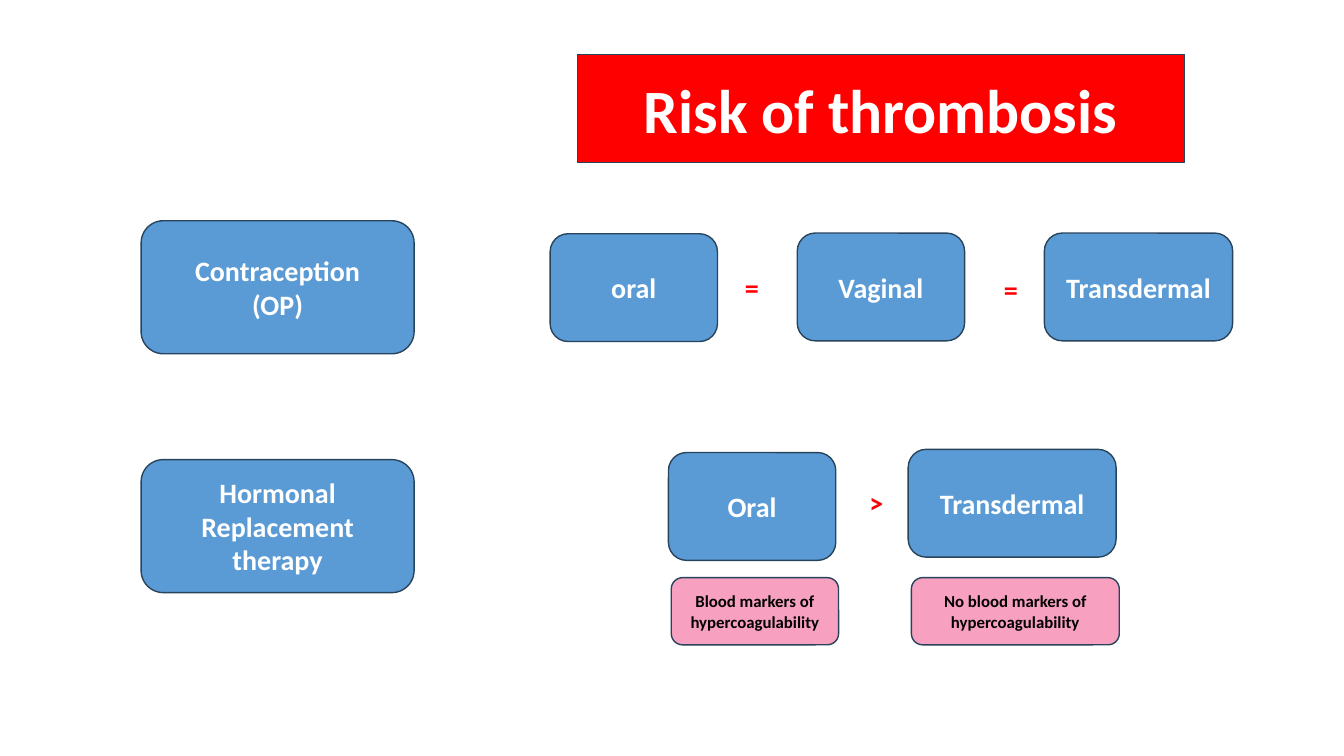
"""Build a slide comparing thrombosis risk by route of hormone intake."""
from dataclasses import dataclass

from lxml.etree import SubElement
from pptx import Presentation
from pptx.dml.color import RGBColor as RGB
from pptx.enum.shapes import MSO_SHAPE as Kind
from pptx.enum.text import MSO_ANCHOR as Anchor, MSO_AUTO_SIZE as Fit, PP_ALIGN as Align
from pptx.oxml.ns import qn
from pptx.util import Pt


@dataclass(frozen=True)
class Theme:
    font: str = "Calibri"
    blue: RGB = RGB(0x5B, 0x9B, 0xD5)
    red: RGB = RGB(0xFF, 0, 0)
    pink: RGB = RGB(0xF8, 0xA0, 0xBF)
    edge: RGB = RGB(0x28, 0x44, 0x5D)
    white: RGB = RGB(0xFF, 0xFF, 0xFF)
    black: RGB = RGB(0, 0, 0)
    head: int = 44
    body: int = 20
    note: int = 12


theme = Theme()


def write(shape, text, size, color, align=Align.CENTER):
    frame = shape.text_frame
    frame.text = text
    for para in frame.paragraphs:
        para.alignment = align
        para.font.name = theme.font
        para.font.size = Pt(size)
        para.font.bold = True
        para.font.color.rgb = color


def dress(shape, text, fill, size, color):
    shape.shadow.inherit = False
    shape.fill.solid()
    shape.fill.fore_color.rgb = fill
    shape.line.color.rgb = theme.edge
    shape.line.width = Pt(1)
    frame = shape.text_frame
    frame.word_wrap = True
    frame.auto_size = Fit.NONE
    frame.vertical_anchor = Anchor.MIDDLE
    write(shape, text, size, color)


deck = Presentation()
deck.slide_width, deck.slide_height = Pt(960), Pt(540)
slide = deck.slides.add_slide(deck.slide_layouts[5])
shapes = slide.shapes

title = shapes.title
title.left, title.top = Pt(412.5), Pt(39)
title.width, title.height = Pt(433.5), Pt(77)
geom = SubElement(title.element.spPr, qn("a:prstGeom"), prst="roundRect")
SubElement(geom, qn("a:avLst"))
dress(title, "Risk of thrombosis", theme.red, theme.head, theme.white)

blue = (theme.blue, theme.body, theme.white)
pink = (theme.pink, theme.note, theme.black)
boxes = [
    ("Contraception\n(OP)", 100.8, 157.7, 195, 95, blue),
    ("Hormonal Replacement therapy", 100.8, 328.3, 195, 95, blue),
    ("oral", 393, 167, 119.5, 77, blue),
    ("Vaginal", 569.5, 166.5, 119.5, 77, blue),
    ("Transdermal", 746, 166.5, 134.5, 77, blue),
    ("Oral", 477.5, 323.3, 119.5, 77, blue),
    ("Transdermal", 648.7, 321, 148.5, 77, blue),
    ("Blood markers of hypercoagulability", 479.5, 412.6, 119.5, 48, pink),
    ("No blood markers of hypercoagulability", 651, 412.6, 148.5, 48, pink),
]
for text, left, top, width, height, style in boxes:
    box = shapes.add_shape(Kind.ROUNDED_RECTANGLE, Pt(left), Pt(top), Pt(width), Pt(height))
    dress(box, text, *style)

for sign, left, top in [("=", 525, 190), ("=", 710, 191), (">", 614, 343.5)]:
    label = shapes.add_textbox(Pt(left), Pt(top), Pt(24.5), Pt(31.5))
    label.text_frame.word_wrap = False
    label.text_frame.auto_size = Fit.SHAPE_TO_FIT_TEXT
    write(label, sign, theme.body, theme.red, Align.LEFT)

deck.save("out.pptx")
